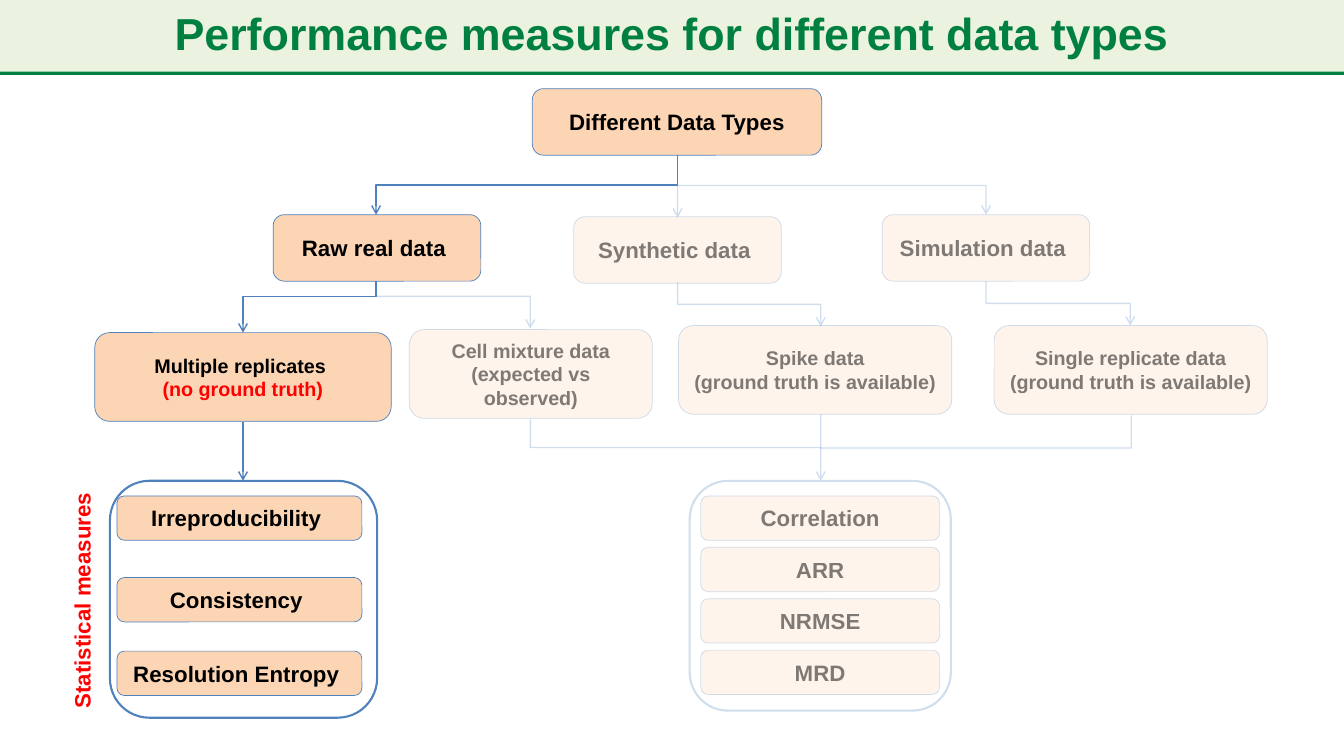
from lxml.etree import SubElement
from pptx import Presentation
from pptx.dml.color import RGBColor
from pptx.enum.shapes import MSO_CONNECTOR, MSO_SHAPE
from pptx.enum.text import MSO_ANCHOR, PP_ALIGN
from pptx.oxml.ns import qn
from pptx.util import Inches, Pt

WIDTH, HEIGHT = 13.33, 7.5
GREEN, PALE_GREEN = "008040", "EBF3E0"
PEACH, BLUE, BLACK, RED = "FCD5B5", "4F81BD", "000000", "FF0000"
FADED, FADED_TEXT = 25, 50
LARGE, SMALL = 15.9, 14.1


def paint(fill, color, opacity=100):
    """Make a fill solid, with opacity in percent."""
    fill.solid()
    fill.fore_color.rgb = RGBColor.from_string(color)
    if opacity < 100:
        color_element = fill._xPr.find(qn("a:solidFill"))[0]
        SubElement(color_element, qn("a:alpha"), val=str(opacity * 1000))


class DiagramSlide:
    font_name = "Arial"

    def __init__(self, presentation):
        self.slide = presentation.slides.add_slide(presentation.slide_layouts[5])
        self.shapes = self.slide.shapes

    def add_run(self, paragraph, text, size, color, opacity=100):
        run = paragraph.add_run()
        run.text = text
        run.font.name = self.font_name
        run.font.size = Pt(size)
        run.font.bold = True
        paint(run.font.fill, color, opacity)

    def title(self, text):
        title = self.shapes.title
        title.left, title.top = Inches(0), Inches(0)
        title.width, title.height = Inches(WIDTH), Inches(0.71)
        paint(title.fill, PALE_GREEN)
        title.text_frame.vertical_anchor = MSO_ANCHOR.MIDDLE
        paragraph = title.text_frame.paragraphs[0]
        paragraph.alignment = PP_ALIGN.CENTER
        paragraph.line_spacing = 0.9
        self.add_run(paragraph, text, 32, GREEN)
        rule = self.line((0, 0.72), (WIDTH, 0.72), color=GREEN, weight=3, arrow=False)
        title._element.addprevious(rule._element)

    def rounded(self, left, top, width, height, weight, faded):
        shape = self.shapes.add_shape(MSO_SHAPE.ROUNDED_RECTANGLE, Inches(left),
                                      Inches(top), Inches(width), Inches(height))
        shape.shadow.inherit = False
        shape.line.width = Pt(weight)
        paint(shape.line.fill, BLUE, FADED if faded else 100)
        return shape

    def frame(self, left, top, width, height, faded=False):
        self.rounded(left, top, width, height, 1.5, faded).fill.background()

    def box(self, left, top, width, height, lines, size=LARGE, faded=False):
        """Add a filled box; each line is a (text, color) pair."""
        shape = self.rounded(left, top, width, height, 0.5, faded)
        paint(shape.fill, PEACH, FADED if faded else 100)
        text_frame = shape.text_frame
        text_frame.word_wrap = True
        text_frame.vertical_anchor = MSO_ANCHOR.MIDDLE
        for index, (text, color) in enumerate(lines):
            paragraph = text_frame.add_paragraph() if index else text_frame.paragraphs[0]
            paragraph.alignment = PP_ALIGN.CENTER
            self.add_run(paragraph, text, size, color, FADED_TEXT if faded else 100)

    def upward_label(self, left, top, width, height, text):
        label = self.shapes.add_textbox(Inches(left), Inches(top),
                                        Inches(width), Inches(height))
        label.text_frame.word_wrap = True
        label.text_frame._txBody.bodyPr.set("vert", "vert270")
        self.add_run(label.text_frame.paragraphs[0], text, LARGE, RED)

    def line(self, start, end, faded=False, arrow=True, color=BLUE, weight=1,
             kind=MSO_CONNECTOR.STRAIGHT):
        points = [Inches(value) for value in (*start, *end)]
        connector = self.shapes.add_connector(kind, *points)
        connector.line.width = Pt(weight)
        paint(connector.line.fill, color, FADED if faded else 100)
        if arrow:
            SubElement(connector.line._get_or_add_ln(), qn("a:tailEnd"), type="arrow")
        SubElement(connector._element.spPr, qn("a:effectLst"))
        return connector

    def corner(self, start, end):
        """Add a faded arrow that runs across and then down."""
        connector = self.line(start, end, True, kind=MSO_CONNECTOR.ELBOW)
        connector._element.spPr.find(qn("a:prstGeom")).set("prst", "bentConnector2")

    def elbow(self, start, end, faded=True, bend=0.5, arrow=True):
        """Add a connector that leaves downward; bend None gives a single corner."""
        connector = self.line(start, end, faded, arrow, kind=MSO_CONNECTOR.ELBOW)
        (x1, y1), (x2, y2) = start, end
        across, down = abs(x2 - x1), y2 - y1
        connector.left = Inches((x1 + x2 - down) / 2)
        connector.top = Inches((y1 + y2 - across) / 2)
        connector.width, connector.height = Inches(down), Inches(across)
        properties = connector._element.spPr
        transform = properties.find(qn("a:xfrm"))
        transform.attrib.pop("flipH", None)
        transform.set("rot", str((90 if x2 < x1 else 270) * 60000))
        if x2 > x1:
            transform.set("flipH", "1")
        geometry = properties.find(qn("a:prstGeom"))
        if bend is None:
            geometry.set("prst", "bentConnector2")
        else:
            SubElement(geometry.find(qn("a:avLst")), qn("a:gd"), name="adj1",
                       fmla=f"val {round(bend * 100000)}")


def main():
    presentation = Presentation()
    presentation.slide_width = Inches(WIDTH)
    presentation.slide_height = Inches(HEIGHT)
    diagram = DiagramSlide(presentation)
    diagram.title("Performance measures for different data types")

    # Measures
    for top, measure in ((4.92, "Irreproducibility "), (5.73, "Consistency "),
                         (6.46, "Resolution Entropy ")):
        diagram.box(1.16, top, 2.43, 0.44, [(measure, BLACK)])
    diagram.frame(1.09, 4.77, 2.65, 2.35)
    diagram.upward_label(0.63, 4.7, 0.47, 2.43, "Statistical measures")
    for row, measure in enumerate(("Correlation", "ARR", "NRMSE", "MRD")):
        diagram.box(6.95, 4.92 + row * 0.51, 2.37, 0.44, [(measure, BLACK)], faded=True)
    diagram.frame(6.84, 4.77, 2.59, 2.28, faded=True)

    # Data types
    diagram.box(5.28, 0.88, 2.87, 0.66, [("Different Data Types", BLACK)])
    for left, top, name, faded in ((2.71, 2.13, "Raw real data ", False),
                                   (5.69, 2.15, "Synthetic data ", True),
                                   (8.75, 2.13, "Simulation data ", True)):
        diagram.box(left, top, 2.06, 0.66, [(name, BLACK)], faded=faded)

    # Data sets
    diagram.box(0.94, 3.3, 2.94, 0.88, [("Multiple replicates ", BLACK),
                                        ("(no ground truth)", RED)], SMALL)
    for left, top, width, name, note in (
            (4.06, 3.27, 2.41, "Cell mixture data", "(expected vs observed)"),
            (6.73, 3.23, 2.71, "Spike data", "(ground truth is available)"),
            (9.86, 3.23, 2.71, "Single replicate data", "(ground truth is available)")):
        diagram.box(left, top, width, 0.88, [(name, BLACK), (note, BLACK)], SMALL, True)

    # Connections
    diagram.elbow((6.72, 1.54), (3.73, 2.13), faded=False)
    diagram.line((6.72, 1.82), (6.72, 2.16), faded=True)
    diagram.corner((6.72, 1.84), (9.78, 2.13))
    diagram.elbow((3.73, 2.79), (2.41, 3.3), faded=False, bend=0.3)
    diagram.corner((3.73, 2.94), (5.26, 3.26))
    diagram.elbow((6.72, 2.8), (8.14, 3.24))
    diagram.elbow((9.78, 2.79), (11.21, 3.23))
    diagram.line((2.41, 4.19), (2.41, 4.77))
    diagram.elbow((5.26, 4.16), (8.14, 4.44), bend=None, arrow=False)
    diagram.line((8.14, 4.11), (8.14, 4.45), faded=True, arrow=False)
    diagram.elbow((11.22, 4.12), (8.14, 4.77))

    presentation.save("out.pptx")


if __name__ == "__main__":
    main()
